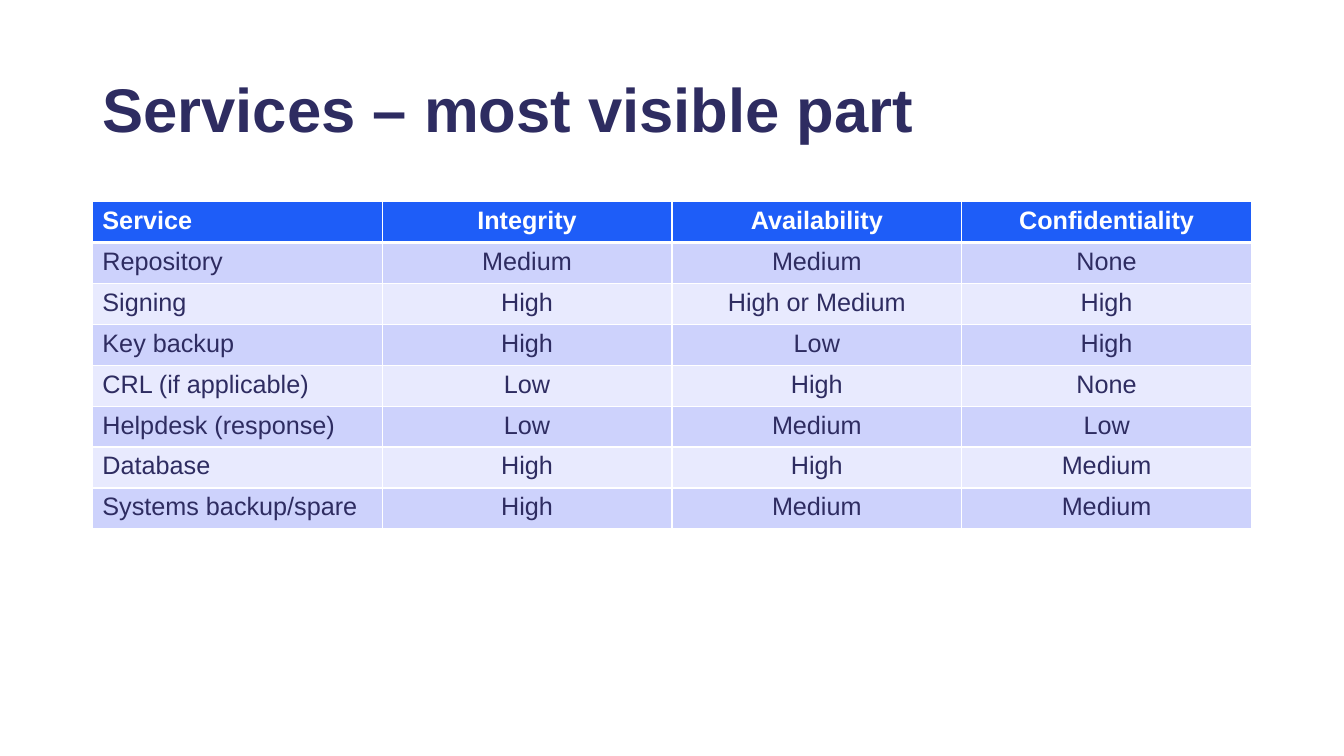
from lxml.etree import SubElement
from pptx import Presentation
from pptx.dml.color import RGBColor
from pptx.enum.text import MSO_ANCHOR, PP_ALIGN
from pptx.oxml.ns import qn
from pptx.util import Pt

PX = 9525
NAVY = RGBColor(0x2E, 0x2C, 0x61)
BLUE = RGBColor(0x1E, 0x5D, 0xF8)
LILAC = RGBColor(0xCD, 0xD2, 0xFC)
PALE = RGBColor(0xE8, 0xEA, 0xFE)
WHITE = RGBColor(0xFF, 0xFF, 0xFF)

ROWS = [
    ("Service", "Integrity", "Availability", "Confidentiality"),
    ("Repository", "Medium", "Medium", "None"),
    ("Signing", "High", "High or Medium", "High"),
    ("Key backup", "High", "Low", "High"),
    ("CRL (if applicable)", "Low", "High", "None"),
    ("Helpdesk (response)", "Low", "Medium", "Low"),
    ("Database", "High", "High", "Medium"),
    ("Systems backup/spare", "High", "Medium", "Medium"),
]


def style(para, size, color, bold):
    font = para.font
    font.name = "Arial"
    font.size = Pt(size)
    font.bold = bold
    font.color.rgb = color


def add_title(slide, box, text):
    title = slide.shapes.title
    title.left, title.top, title.width, title.height = [n * PX for n in box]
    frame = title.text_frame
    frame.text = text
    frame.word_wrap = True
    frame.vertical_anchor = MSO_ANCHOR.MIDDLE
    para = frame.paragraphs[0]
    para.alignment = PP_ALIGN.LEFT
    para.line_spacing = 0.9
    style(para, 44, NAVY, True)


def add_edges(cell, row):
    props = cell._tc.get_or_add_tcPr()
    widths = {"lnL": 1, "lnR": 1, "lnT": 3 if row == 1 else 1, "lnB": 3 if row == 0 else 1}
    for tag, width in widths.items():
        line = SubElement(props, qn(f"a:{tag}"), w=str(Pt(width)))
        fill = SubElement(line, qn("a:solidFill"))
        SubElement(fill, qn("a:srgbClr"), val=str(WHITE))


def fill_cell(cell, text, row, col):
    add_edges(cell, row)
    cell.fill.solid()
    cell.fill.fore_color.rgb = BLUE if row == 0 else LILAC if row % 2 else PALE
    cell.text = text
    para = cell.text_frame.paragraphs[0]
    para.alignment = PP_ALIGN.CENTER if col else PP_ALIGN.LEFT
    style(para, 18, NAVY if row else WHITE, row == 0)


def add_grid(slide, box, rows):
    frame = slide.shapes.add_table(len(rows), len(rows[0]), *[n * PX for n in box])
    table = frame.table
    for r, texts in enumerate(rows):
        for c, text in enumerate(texts):
            fill_cell(table.cell(r, c), text, r, c)


def main():
    deck = Presentation()
    deck.slide_width, deck.slide_height = 1280 * PX, 720 * PX
    slide = deck.slides.add_slide(deck.slide_layouts[5])
    add_title(slide, (88, 38, 1104, 139), "Services – most visible part")
    add_grid(slide, (88, 192, 1104, 312), ROWS)
    deck.save("out.pptx")


if __name__ == "__main__":
    main()
